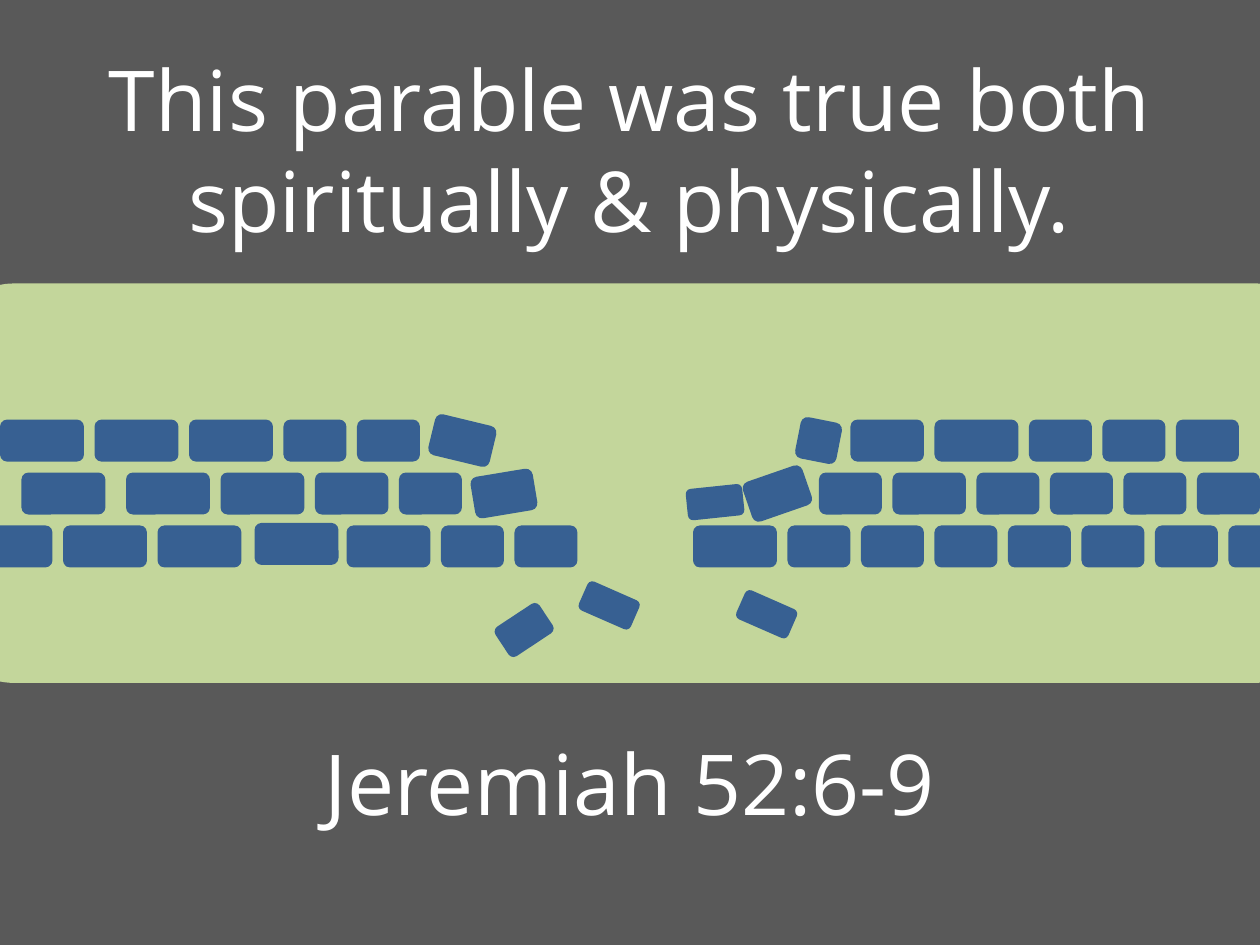
"""Build a slide showing a broken wall between a statement and its reference."""
from pptx import Presentation
from pptx.dml.color import RGBColor
from pptx.enum.shapes import MSO_SHAPE
from pptx.enum.text import MSO_ANCHOR, MSO_AUTO_SIZE, PP_ALIGN
from pptx.util import Inches, Pt

RECT, ROUND = MSO_SHAPE.RECTANGLE, MSO_SHAPE.ROUNDED_RECTANGLE
TOP, GROW = MSO_ANCHOR.TOP, MSO_AUTO_SIZE.SHAPE_TO_FIT_TEXT
CENTER = PP_ALIGN.CENTER

GREY, GREEN, BLUE, WHITE = "595959", "C3D69B", "376092", "FFFFFF"
FONT = "Open Sans"

UNIT = 1 / 12
BRICK_H = 4 * UNIT
TOP_ROW, MIDDLE_ROW, BOTTOM_ROW = 3.33, 3.75, 4.17

# Left edge, row top, and brick widths in units
COURSES = [
    (0, TOP_ROW, [8, 8, 8, 6, 6]),
    (0.17, MIDDLE_ROW, [8]),
    (1, MIDDLE_ROW, [8, 8, 7, 6]),
    (-0.25, BOTTOM_ROW, [8, 8, 8]),
    (2.02, 4.15, [8]),
    (2.75, BOTTOM_ROW, [8, 6, 6]),
    (6.75, TOP_ROW, [7, 8, 6, 6, 6]),
    (6.5, MIDDLE_ROW, [6, 7, 6, 6, 6, 6]),
    (5.5, BOTTOM_ROW, [8] + [6] * 7),
]

# Left, top, width, height, rotation
LOOSE_BRICKS = [
    (3.42, TOP_ROW, 0.5, BRICK_H, 13.6),
    (3.75, MIDDLE_ROW, 0.5, BRICK_H, 350.6),
    (4.61, 4.68, 0.45, 0.25, 23.7),
    (3.95, 4.86, 0.42, 0.28, 326.5),
    (6.33, TOP_ROW, BRICK_H, BRICK_H, 11.2),
    (5.92, MIDDLE_ROW, 0.5, BRICK_H, 340.9),
    (5.45, 3.86, 0.45, 0.25, 354),
    (5.86, 4.75, 0.45, 0.25, 23.7),
]


def rgb(value):
    """Return the colour for a hex string."""
    return RGBColor.from_string(value)


def add_block(shapes, kind, box, color, rotation=0):
    """Add a plain filled shape."""
    sp = shapes.add_shape(kind, *map(Inches, box))
    sp.shadow.inherit = False
    sp.fill.solid()
    sp.fill.fore_color.rgb = rgb(color)
    sp.line.fill.background()
    sp.rotation = rotation


def add_wall(s):
    """Add the standing courses and the fallen bricks as one group."""
    wall = s.shapes.add_group_shape().shapes
    for x, y, widths in COURSES:
        for units in widths:
            add_block(wall, ROUND, (x, y, units * UNIT, BRICK_H), BLUE)
            x += (units + 1) * UNIT
    for *box, rotation in LOOSE_BRICKS:
        add_block(wall, ROUND, box, BLUE, rotation)


def set_text(sp, text, top, height):
    """Place a full-width text shape and fill it with centred white text."""
    sp.left, sp.top, sp.width, sp.height = map(Inches, (0, top, 10, height))
    tf = sp.text_frame
    tf.text = text
    tf.word_wrap = True
    tf.auto_size = GROW
    tf.vertical_anchor = TOP
    p = tf.paragraphs[0]
    p.alignment = CENTER
    p.font.name = FONT
    p.font.size = Pt(48)
    p.font.color.rgb = rgb(WHITE)


def main():
    """Build and save the slide."""
    prs = Presentation()
    prs.slide_width, prs.slide_height = Inches(10), Inches(7.5)
    s = prs.slides.add_slide(prs.slide_layouts[5])
    add_block(s.shapes, RECT, (0, 0, 10, 7.5), GREY)
    add_block(s.shapes, ROUND, (-0.42, 2.25, 10.92, 3.17), GREEN)
    add_wall(s)
    title = s.shapes.title
    s.shapes.element.append(title.element)
    set_text(title, "This parable was true both spiritually & physically.", 0.33, 1.72)
    reference = s.shapes.add_textbox(0, 0, 0, 0)
    set_text(reference, "Jeremiah 52:6-9", 5.76, 0.91)
    prs.save("out.pptx")


if __name__ == "__main__":
    main()
